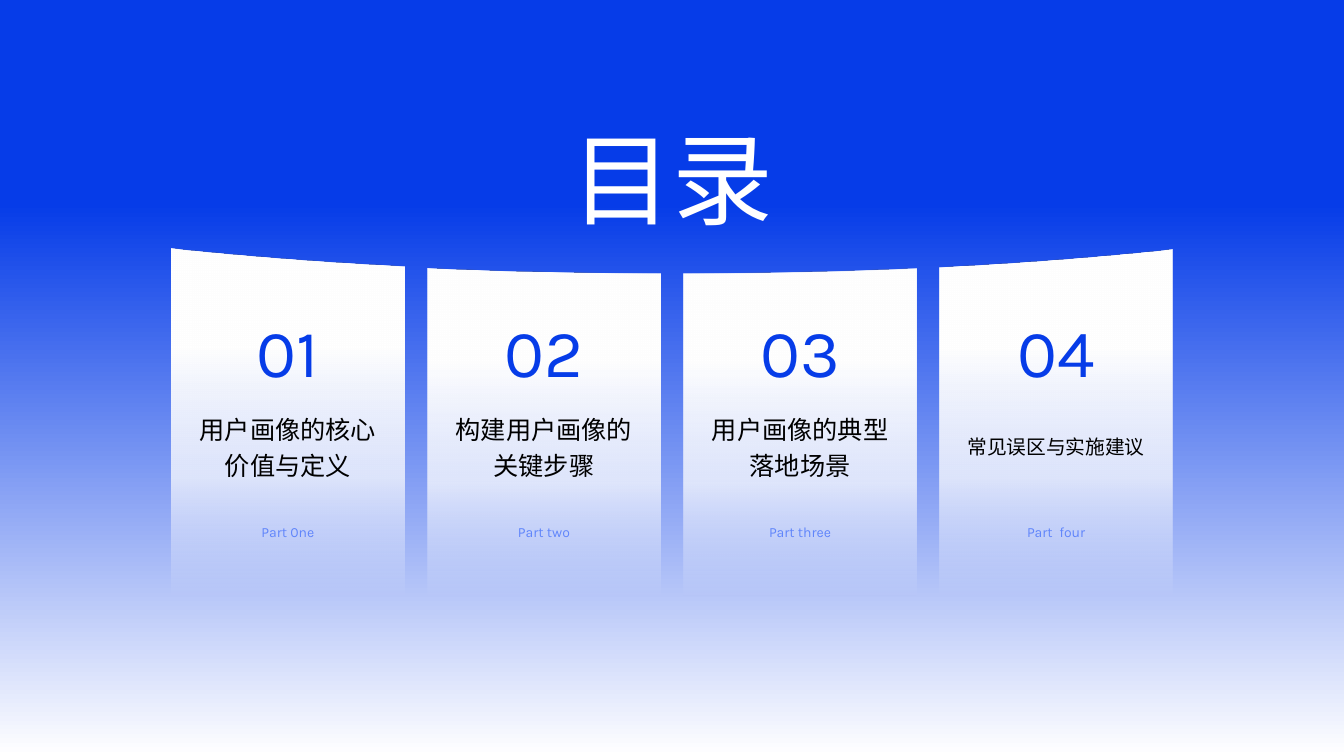
from lxml import etree
from pptx import Presentation
from pptx import util as u
from pptx.dml.color import RGBColor
from pptx.enum import shapes, text
from pptx.oxml import ns


def tint(code):
    return RGBColor.from_string(code)


class Deck:
    """Holds the style and the current slide, and draws each kind of element."""

    font = "Karla"
    blue, pale, white, black = "063CE8", "6085FB", "FFFFFF", "000000"
    mid, wide, base = 6.67, 2.31, 5.91

    def __init__(self):
        self.prs = Presentation()
        self.prs.slide_width = u.Inches(13.33)
        self.prs.slide_height = u.Inches(7.5)
        self.slide = self.prs.slides.add_slide(self.prs.slide_layouts[6])

    def fade(self, shape, stops):
        shape.shadow.inherit = False
        shape.line.fill.background()
        shape.fill.gradient()
        shape.fill.gradient_angle = 270
        group = shape._element.spPr.find(".//" + ns.qn("a:gsLst"))
        for old in list(group):
            group.remove(old)
        for place, code, solid in stops:
            stop = etree.SubElement(group, ns.qn("a:gs"), pos=str(place * 1000))
            color = etree.SubElement(stop, ns.qn("a:srgbClr"), val=code)
            if solid < 100:
                etree.SubElement(color, ns.qn("a:alpha"), val=str(solid * 1000))

    def back(self):
        rect = self.slide.shapes.add_shape(
            shapes.MSO_SHAPE.RECTANGLE, 0, 0,
            self.prs.slide_width, self.prs.slide_height)
        self.fade(rect, [(27, self.blue, 100), (100, self.white, 100)])

    def arc(self, x):
        return 2.71 - 0.24 * (abs(x - self.mid) / 4.97) ** 2.2

    def card(self, left, steps=16):
        edge = [left + self.wide * i / steps for i in range(steps + 1)]
        spots = [(x, self.arc(x)) for x in edge]
        spots += [(edge[-1], self.base), (left, self.base)]
        spots = [(u.Inches(x), u.Inches(y)) for x, y in spots]
        path = self.slide.shapes.build_freeform(*spots[0], scale=1.0)
        path.add_line_segments(spots[1:], close=True)
        self.fade(path.convert_to_shape(), [
            (28, self.white, 100), (66, self.white, 73), (100, self.white, 0)])

    def label(self, words, mid, top, width, height, size, color,
              space=1.1, anchor=text.MSO_ANCHOR.TOP):
        box = self.slide.shapes.add_textbox(
            u.Inches(mid - width / 2), u.Inches(top),
            u.Inches(width), u.Inches(height))
        frame = box.text_frame
        frame.word_wrap = True
        frame.vertical_anchor = anchor
        para = frame.paragraphs[0]
        para.text = words
        para.alignment = text.PP_ALIGN.CENTER
        para.line_spacing = space
        para.font.name = self.font
        para.font.size = u.Pt(size)
        para.font.color.rgb = tint(color)


def main():
    deck = Deck()
    deck.back()
    deck.label("目录", deck.mid, 0.99, 5.02, 1.31, 72, deck.white)
    parts = [
        ("用户画像的核心价值与定义", 18, "Part 0ne"),
        ("构建用户画像的关键步骤", 18, "Part two"),
        ("用户画像的典型落地场景", 18, "Part three"),
        ("常见误区与实施建议", 14.1, "Part  four"),
    ]
    for i, (topic, size, note) in enumerate(parts):
        left = 1.7 + 2.54 * i
        mid = left + deck.wide / 2
        deck.card(left)
        deck.label(f"{i + 1:02}", mid, 2.95, 1.68, 0.91, 48, deck.blue)
        deck.label(topic, mid, 3.86, 1.97, 1.1, size, deck.black,
                   1.2, text.MSO_ANCHOR.MIDDLE)
        deck.label(note, mid, 5.13, 2.37, 0.25, 10, deck.pale)
    deck.prs.save("out.pptx")


if __name__ == "__main__":
    main()
